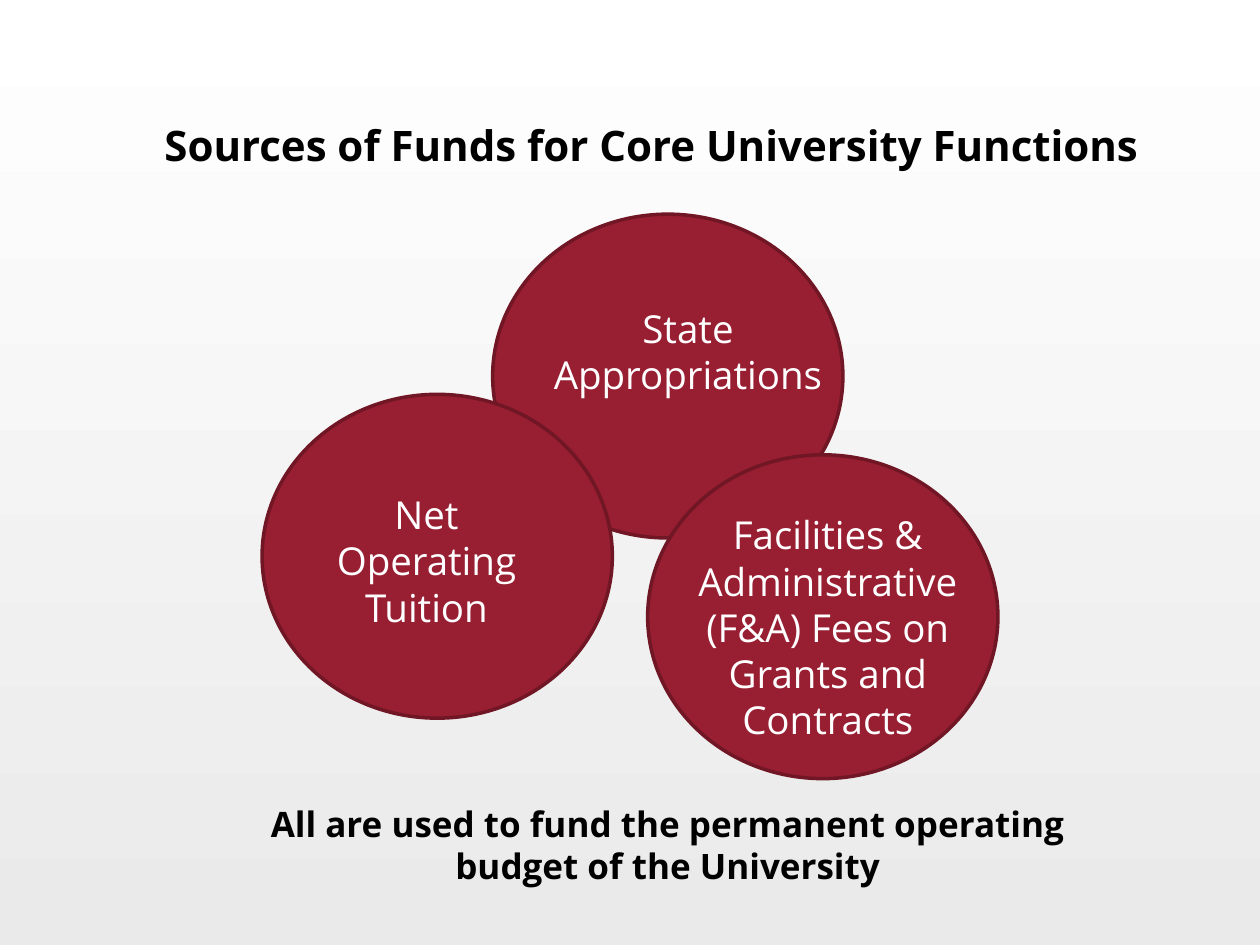
from dataclasses import dataclass

from pptx import Presentation
from pptx.dml.color import RGBColor
from pptx.enum.shapes import MSO_SHAPE
from pptx.enum.text import MSO_ANCHOR, MSO_AUTO_SIZE, PP_ALIGN
from pptx.util import Inches, Pt


@dataclass(frozen=True)
class Theme:
    font: str = "Open Sans"
    background_bottom: str = "EAEAEA"
    background_top: str = "FFFFFF"
    circle_fill: str = "981E32"
    circle_line: str = "701625"
    dark_text: str = "000000"
    light_text: str = "FFFFFF"
    title_size: int = 24
    label_size: int = 22
    note_size: int = 20


theme = Theme()


def write_text(shape, text, size, color, bold=False):
    frame = shape.text_frame
    frame.word_wrap = True
    frame.auto_size = MSO_AUTO_SIZE.SHAPE_TO_FIT_TEXT
    frame.vertical_anchor = MSO_ANCHOR.TOP
    paragraph = frame.paragraphs[0]
    paragraph.text = text
    paragraph.alignment = PP_ALIGN.CENTER
    paragraph.font.name = theme.font
    paragraph.font.size = Pt(size)
    paragraph.font.bold = bold
    paragraph.font.color.rgb = RGBColor.from_string(color)


presentation = Presentation()
presentation.slide_width, presentation.slide_height = Inches(10), Inches(7.5)
slide = presentation.slides.add_slide(presentation.slide_layouts[5])

# Background: grey at the bottom fading to white at the top
background = slide.background.fill
background.gradient()
background.gradient_angle = 90
background_colors = (theme.background_bottom, theme.background_top)
for stop, position, color in zip(background.gradient_stops, (0, 1), background_colors):
    stop.position = position
    stop.color.rgb = RGBColor.from_string(color)

# Title
title = slide.shapes.title
title.left, title.top = Inches(0.5), Inches(0.9)
title.width, title.height = Inches(9.34), Inches(0.51)
write_text(title, "Sources of Funds for Core University Functions",
           size=theme.title_size, color=theme.dark_text, bold=True)

# Closing note
note = slide.shapes.add_textbox(Inches(1.8), Inches(6.32), Inches(7), Inches(0.77))
write_text(note, "All are used to fund the permanent operating budget of the University",
           size=theme.note_size, color=theme.dark_text, bold=True)

# Fund sources: circle position, label box, label
sources = [
    ((3.91, 1.7), (4.24, 2.37, 2.44, 0.84), "State Appropriations"),
    ((2.08, 3.13), (2.53, 3.85, 1.71, 1.21), "Net Operating Tuition"),
    ((5.14, 3.61), (5.39, 4.01, 2.36, 1.95),
     "Facilities & Administrative (F&A) Fees on Grants and Contracts"),
]
diagram = slide.shapes.add_group_shape()

# Overlapping circles, below all labels
for (left, top), _, _ in sources:
    circle = diagram.shapes.add_shape(
        MSO_SHAPE.OVAL, Inches(left), Inches(top), Inches(2.78), Inches(2.57))
    circle.shadow.inherit = False
    circle.fill.solid()
    circle.fill.fore_color.rgb = RGBColor.from_string(theme.circle_fill)
    circle.line.color.rgb = RGBColor.from_string(theme.circle_line)
    circle.line.width = Pt(2)

# Labels
for _, box, text in sources:
    label = diagram.shapes.add_textbox(*(Inches(length) for length in box))
    write_text(label, text, size=theme.label_size, color=theme.light_text)

presentation.save("out.pptx")
